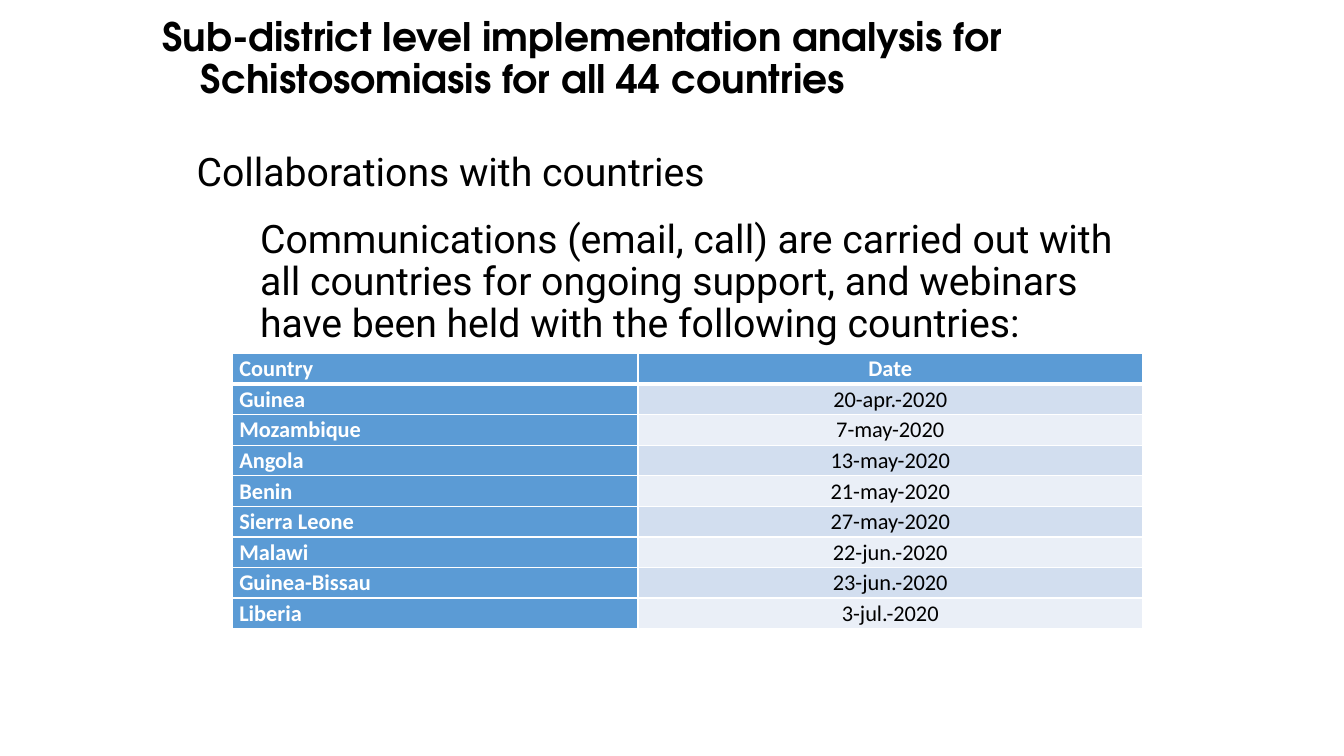
from lxml.etree import SubElement
from pptx import Presentation
from pptx.dml.color import RGBColor
from pptx.enum.text import MSO_ANCHOR, MSO_AUTO_SIZE, PP_ALIGN
from pptx.oxml.ns import qn
from pptx.util import Cm, Pt

BLUE, PALE, PALER = "5B9BD5", "D2DEEF", "EAEFF7"
WHITE, BLACK = "FFFFFF", "000000"
TITLE = "Sub-district level implementation analysis for Schistosomiasis for all 44 countries"
BODY = [
    ("Collaborations with countries", 0, 1.42),
    ("Communications (email, call) are carried out with all countries for ongoing "
     "support, and webinars have been held with the following countries:", 1, 3.02),
]
WEBINARS = [
    ("Country", "Date"),
    ("Guinea", "20-apr.-2020"),
    ("Mozambique", "7-may-2020"),
    ("Angola", "13-may-2020"),
    ("Benin", "21-may-2020"),
    ("Sierra Leone", "27-may-2020"),
    ("Malawi", "22-jun.-2020"),
    ("Guinea-Bissau", "23-jun.-2020"),
    ("Liberia", "3-jul.-2020"),
]


def color(value):
    """Return the colour for a hex string."""
    return RGBColor.from_string(value)


def place(shape, left, top, width, height):
    """Move and size a shape, in centimetres."""
    shape.left, shape.top = Cm(left), Cm(top)
    shape.width, shape.height = Cm(width), Cm(height)


def add_run(paragraph, text, font_name, size, hex_color=BLACK, bold=False):
    """Add one formatted run to a paragraph."""
    run = paragraph.add_run()
    run.text = text
    run.font.name, run.font.size, run.font.bold = font_name, Pt(size), bold
    run.font.color.rgb = color(hex_color)


def set_indent(paragraph, margin, first_line):
    """Set the left margin and first-line indent, without a bullet."""
    properties = paragraph._p.get_or_add_pPr()
    properties.set("marL", str(Cm(margin)))
    properties.set("indent", str(Cm(first_line)))
    SubElement(properties, qn("a:buNone"))


def fill_title(title):
    """Place and write the slide title."""
    place(title, 3.84, 1.24, 29.21, 1.65)
    frame = title.text_frame
    frame.auto_size = MSO_AUTO_SIZE.NONE
    frame.vertical_anchor = MSO_ANCHOR.MIDDLE
    frame.margin_bottom = Cm(1.25)
    paragraph = frame.paragraphs[0]
    set_indent(paragraph, 0.97, -0.97)
    paragraph.alignment = PP_ALIGN.LEFT
    paragraph.line_spacing = 0.9
    paragraph.space_before = Pt(0)
    add_run(paragraph, TITLE, "TeX Gyre Adventor", 28, bold=True)


def fill_body(body):
    """Place and write the two-level list."""
    place(body, 3.28, 3.71, 26.04, 12.9)
    frame = body.text_frame
    frame.auto_size = MSO_AUTO_SIZE.NONE
    for index, (text, level, margin) in enumerate(BODY):
        paragraph = frame.add_paragraph() if index else frame.paragraphs[0]
        set_indent(paragraph, margin, 0)
        paragraph.level = level
        paragraph.line_spacing = 0.9
        paragraph.space_before = Pt(7.5 if index else 0)
        paragraph.space_after = Pt(10)
        add_run(paragraph, text, "Roboto", 28)


def set_borders(cell, top, bottom):
    """Draw white borders around a cell, with widths in points."""
    properties = cell._tc.get_or_add_tcPr()
    for side, width in (("L", 1), ("R", 1), ("T", top), ("B", bottom)):
        line = SubElement(properties, qn(f"a:ln{side}"), w=str(Pt(width)))
        SubElement(SubElement(line, qn("a:solidFill")), qn("a:srgbClr"), val=WHITE)


def fill_cell(cell, text, row, column):
    """Format and write one table cell."""
    is_heading = row == 0 or column == 0
    set_borders(cell, 3 if row == 1 else 1, 3 if row == 0 else 1)
    cell.fill.solid()
    cell.fill.fore_color.rgb = color(BLUE if is_heading else PALE if row % 2 else PALER)
    cell.margin_left = cell.margin_right = Cm(0.18)
    cell.margin_top = cell.margin_bottom = Cm(0)
    paragraph = cell.text_frame.paragraphs[0]
    paragraph.alignment = PP_ALIGN.CENTER if column else PP_ALIGN.LEFT
    paragraph.line_spacing = 1.07
    add_run(paragraph, text, "Calibri", 16, WHITE if is_heading else BLACK, is_heading)


def add_webinar_table(slide):
    """Add the table of countries and webinar dates."""
    table = slide.shapes.add_table(
        len(WEBINARS), 2, Cm(5.85), Cm(8.91), Cm(22.94), Cm(6.93)).table
    table.columns[0].width, table.columns[1].width = Cm(10.23), Cm(12.71)
    for row, values in enumerate(WEBINARS):
        table.rows[row].height = Cm(0.77)
        for column, text in enumerate(values):
            fill_cell(table.cell(row, column), text, row, column)


def main():
    """Build and save the slide."""
    presentation = Presentation()
    presentation.slide_width, presentation.slide_height = Cm(33.87), Cm(19.05)
    slide = presentation.slides.add_slide(presentation.slide_layouts[1])
    fill_title(slide.shapes.title)
    fill_body(slide.placeholders[1])
    add_webinar_table(slide)
    presentation.save("out.pptx")


if __name__ == "__main__":
    main()
